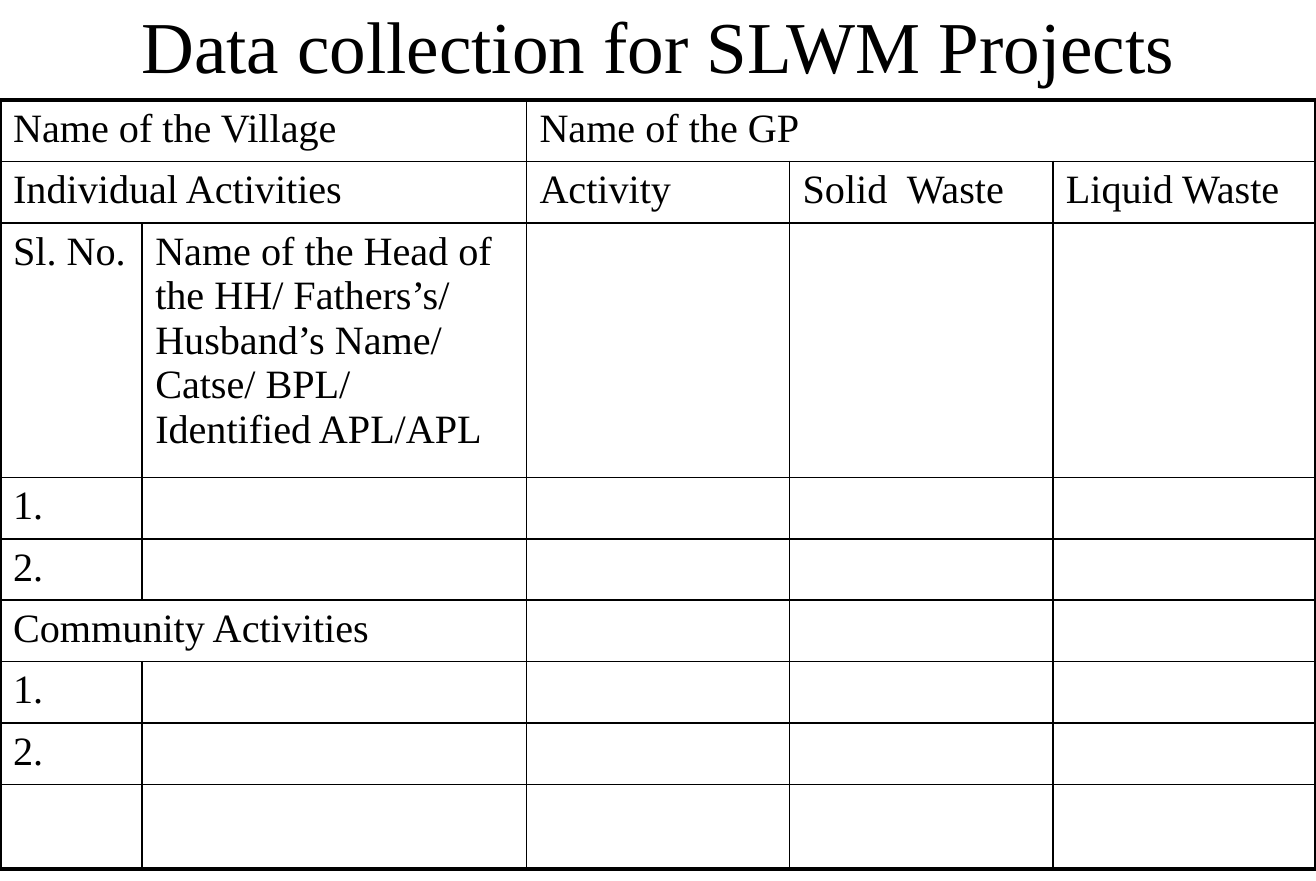
from pptx import Presentation
from pptx.dml.color import RGBColor
from pptx.enum.text import MSO_ANCHOR, PP_ALIGN
from pptx.oxml.ns import qn
from pptx.util import Inches, Pt
from lxml.etree import SubElement

HUE = {"ink": "000000"}
FONT = "Times New Roman"
WIDE, HIGH = Pt(720), Pt(482)
THIN, THICK = Pt(1), Pt(2.25)

COLS = [1.08, 2.92, 2, 2, 2]
ROWS = [0.42, 0.42, 1.17, 0.39, 0.4, 0.44, 0.44, 0.37, 0.64]

# Text by (row, column), and how many columns a cell spans
TEXT = {
    (0, 0): "Name of the Village",
    (0, 2): "Name of the GP",
    (1, 0): "Individual Activities",
    (1, 2): "Activity",
    (1, 3): "Solid  Waste",
    (1, 4): "Liquid Waste",
    (2, 0): "Sl. No.",
    (2, 1): "Name of the Head of the HH/ Fathers’s/ Husband’s Name/ "
            "Catse/ BPL/ Identified APL/APL",
    (3, 0): "1.",
    (4, 0): "2.",
    (5, 0): "Community Activities",
    (6, 0): "1.",
    (7, 0): "2.",
}
SPANS = {(0, 0): 2, (0, 2): 3, (1, 0): 2, (5, 0): 2}


def write(frame, text, size=22, align=PP_ALIGN.LEFT, hue="ink", before=0):
    para = frame.paragraphs[0]
    para.alignment = align
    para.line_spacing = 1.0
    if before:
        gap = SubElement(para._p.get_or_add_pPr(), qn("a:spcBef"))
        SubElement(gap, qn("a:spcPct"), val=str(before * 1000))
    run = para.add_run()
    run.text = text
    run.font.name = FONT
    run.font.size = Pt(size)
    run.font.color.rgb = RGBColor.from_string(HUE[hue])


def edge(cell, **widths):
    """Draw cell borders; they must come before the fill."""
    props = cell._tc.get_or_add_tcPr()
    for spot, (side, width) in enumerate(widths.items()):
        line = props.makeelement(qn("a:" + side), {"w": str(int(width))})
        fill = SubElement(line, qn("a:solidFill"))
        SubElement(fill, qn("a:srgbClr"), val=HUE["ink"])
        props.insert(spot, line)


def title(slide, left, top, width, height):
    box = slide.shapes.add_textbox(left, top, width, height)
    frame = box.text_frame
    frame.word_wrap = True
    frame.vertical_anchor = MSO_ANCHOR.MIDDLE
    write(frame, "Data collection for SLWM Projects", size=40,
          align=PP_ALIGN.CENTER)


def form(slide, left, top, width, height):
    rows, cols = len(ROWS), len(COLS)
    shape = slide.shapes.add_table(rows, cols, left, top, width, height)
    table = shape.table
    table.first_row = table.horz_banding = False
    for col, part in zip(table.columns, COLS):
        col.width = int(width * part / sum(COLS))
    for row, part in zip(table.rows, ROWS):
        row.height = Inches(part)
    shape.height = height

    # Joined cells
    for (r, c), span in SPANS.items():
        table.cell(r, c).merge(table.cell(r, c + span - 1))

    # Fill, borders and text: thick around the outside, thin within
    for r in range(rows):
        for c in range(cols):
            cell = table.cell(r, c)
            if cell.is_spanned:
                continue
            last = c + SPANS.get((r, c), 1) == cols
            cell.fill.background()
            edge(cell,
                 lnL=THICK if c == 0 else THIN,
                 lnR=THICK if last else THIN,
                 lnT=THICK if r == 0 else THIN,
                 lnB=THICK if r == rows - 1 else THIN)
            if (r, c) in TEXT:
                write(cell.text_frame, TEXT[r, c], before=20)


def main():
    deck = Presentation()
    deck.slide_width, deck.slide_height = WIDE, HIGH
    slide = deck.slides.add_slide(deck.slide_layouts[6])
    title(slide, int(WIDE * 0.05), 0, int(WIDE * 0.9), Inches(0.68))
    form(slide, 0, Inches(0.76), WIDE, Inches(5.82))
    deck.save("out.pptx")


if __name__ == "__main__":
    main()
